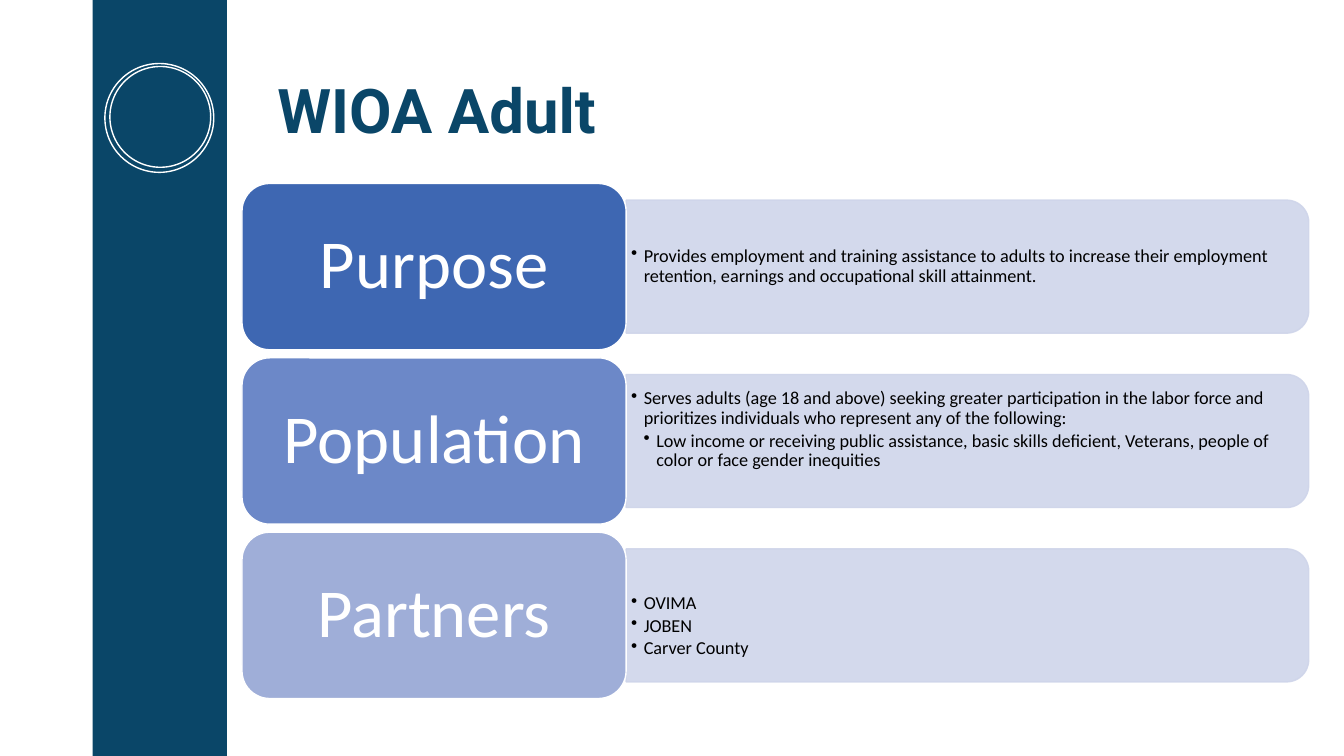
import pptx
import pptx.dml.color
import pptx.enum.shapes
import pptx.enum.text
import pptx.oxml.ns
import pptx.util
from lxml import etree

Inches, Pt = pptx.util.Inches, pptx.util.Pt
RGBColor = pptx.dml.color.RGBColor
SHAPE = pptx.enum.shapes.MSO_SHAPE
ALIGN = pptx.enum.text.PP_ALIGN
MIDDLE = pptx.enum.text.MSO_ANCHOR.MIDDLE
qn = pptx.oxml.ns.qn

NAVY = RGBColor(0x0A, 0x46, 0x68)
WHITE = RGBColor(0xFF, 0xFF, 0xFF)
BLACK = RGBColor(0, 0, 0)
PANEL_BLUE = RGBColor(0xCF, 0xD5, 0xEA)

# Content: label, label colour, extra top and bottom inset, (level, detail)
TITLE = "WIOA Adult"
ROWS = [
    ("Purpose", RGBColor(0x3E, 0x67, 0xB2), 0, 0, [
        (1, "Provides employment and training assistance to adults to increase "
            "their employment retention, earnings and occupational skill attainment."),
    ]),
    ("Population", RGBColor(0x6C, 0x88, 0xC8), 0, 0.22, [
        (1, "Serves adults (age 18 and above) seeking greater participation in the "
            "labor force and prioritizes individuals who represent any of the following:"),
        (2, "Low income or receiving public assistance, basic skills deficient, "
            "Veterans, people of color or face gender inequities"),
    ]),
    ("Partners", RGBColor(0x9F, 0xAE, 0xD8), 0.22, 0, [
        (1, "OVIMA"),
        (1, "JOBEN"),
        (1, "Carver County"),
    ]),
]

# Layout
FIRST_CENTER, ROW_PITCH = 2.645, 1.73
LABEL_LEFT, LABEL_WIDTH, LABEL_HEIGHT = 2.4, 3.81, 1.65
PANEL_LEFT, PANEL_WIDTH, PANEL_HEIGHT = 6.21, 6.77, 1.32
DETAIL_WIDTH, DETAIL_HEIGHT = 6.71, 1.19
BULLET_INDENT = 0.125
RINGS = [(1.09, 0.66, 1.0), (1.04, 0.63, 1.08)]


def write_text(frame, lines, size, color, font="Calibri", bold=False,
               align=ALIGN.LEFT, insets=(0.1, 0.05, 0.1, 0.05), after=0):
    """Write (level, text) lines; level 0 has no bullet."""
    frame.word_wrap = True
    frame.vertical_anchor = MIDDLE
    (frame.margin_left, frame.margin_top,
     frame.margin_right, frame.margin_bottom) = map(Inches, insets)
    for index, (level, text) in enumerate(lines):
        paragraph = frame.paragraphs[0] if index == 0 else frame.add_paragraph()
        paragraph.alignment = align
        paragraph.line_spacing = 0.9
        paragraph.space_after = Pt(after)
        run = paragraph.add_run()
        run.text = text
        run.font.name = font
        run.font.size = Pt(size)
        run.font.bold = bold
        run.font.color.rgb = color
        if level:
            paragraph.level = level
            properties = paragraph._p.get_or_add_pPr()
            properties.set("marL", str(Inches(BULLET_INDENT * level)))
            properties.set("indent", str(-Inches(BULLET_INDENT)))
            etree.SubElement(properties, qn("a:buChar")).set("char", "•")


def add_block(kind, left, top, width, height, fill=None, line=None):
    block = slide.shapes.add_shape(
        kind, Inches(left), Inches(top), Inches(width), Inches(height))
    block.shadow.inherit = False
    if fill is None:
        block.fill.background()
    else:
        block.fill.solid()
        block.fill.fore_color.rgb = fill
    if line is None:
        block.line.fill.background()
    else:
        block.line.color.rgb = line
        block.line.width = Pt(1)
    return block


deck = pptx.Presentation()
deck.slide_width, deck.slide_height = Inches(13.33), Inches(7.5)
slide = deck.slides.add_slide(deck.slide_layouts[5])

# Side band with double ring
add_block(SHAPE.RECTANGLE, 0.92, 0, 1.33, 7.5, fill=NAVY)
for left, top, diameter in RINGS:
    add_block(SHAPE.OVAL, left, top, diameter, diameter, line=WHITE)

# Title
title = slide.shapes.title
title.left, title.top = Inches(2.65), Inches(0.4)
title.width, title.height = Inches(9.77), Inches(1.45)
write_text(title.text_frame, [(0, TITLE)], size=44, color=NAVY, font="Roboto", bold=True)

# Rows: panel, details, label
for number, (label, label_color, extra_top, extra_bottom, details) in enumerate(ROWS):
    center = FIRST_CENTER + number * ROW_PITCH

    # The panel is drawn upright and turned, so its rounded end faces right
    panel = add_block(
        SHAPE.ROUND_2_SAME_RECTANGLE,
        PANEL_LEFT + (PANEL_WIDTH - PANEL_HEIGHT) / 2, center - PANEL_WIDTH / 2,
        PANEL_HEIGHT, PANEL_WIDTH, fill=PANEL_BLUE, line=PANEL_BLUE)
    panel.rotation = 90
    for color in panel._element.spPr.iter(qn("a:srgbClr")):
        etree.SubElement(color, qn("a:alpha")).set("val", "90000")

    detail_box = slide.shapes.add_textbox(
        Inches(PANEL_LEFT), Inches(center - DETAIL_HEIGHT / 2),
        Inches(DETAIL_WIDTH), Inches(DETAIL_HEIGHT))
    write_text(detail_box.text_frame, details, size=13, color=BLACK, after=2,
               insets=(0.05, 0.03 + extra_top, 0.05, 0.03 + extra_bottom))

    label_box = add_block(
        SHAPE.ROUNDED_RECTANGLE, LABEL_LEFT, center - LABEL_HEIGHT / 2,
        LABEL_WIDTH, LABEL_HEIGHT, fill=label_color, line=WHITE)
    write_text(label_box.text_frame, [(0, label)], size=49, color=WHITE,
               align=ALIGN.CENTER, insets=(0.2, 0.1, 0.2, 0.1))

deck.save("out.pptx")
